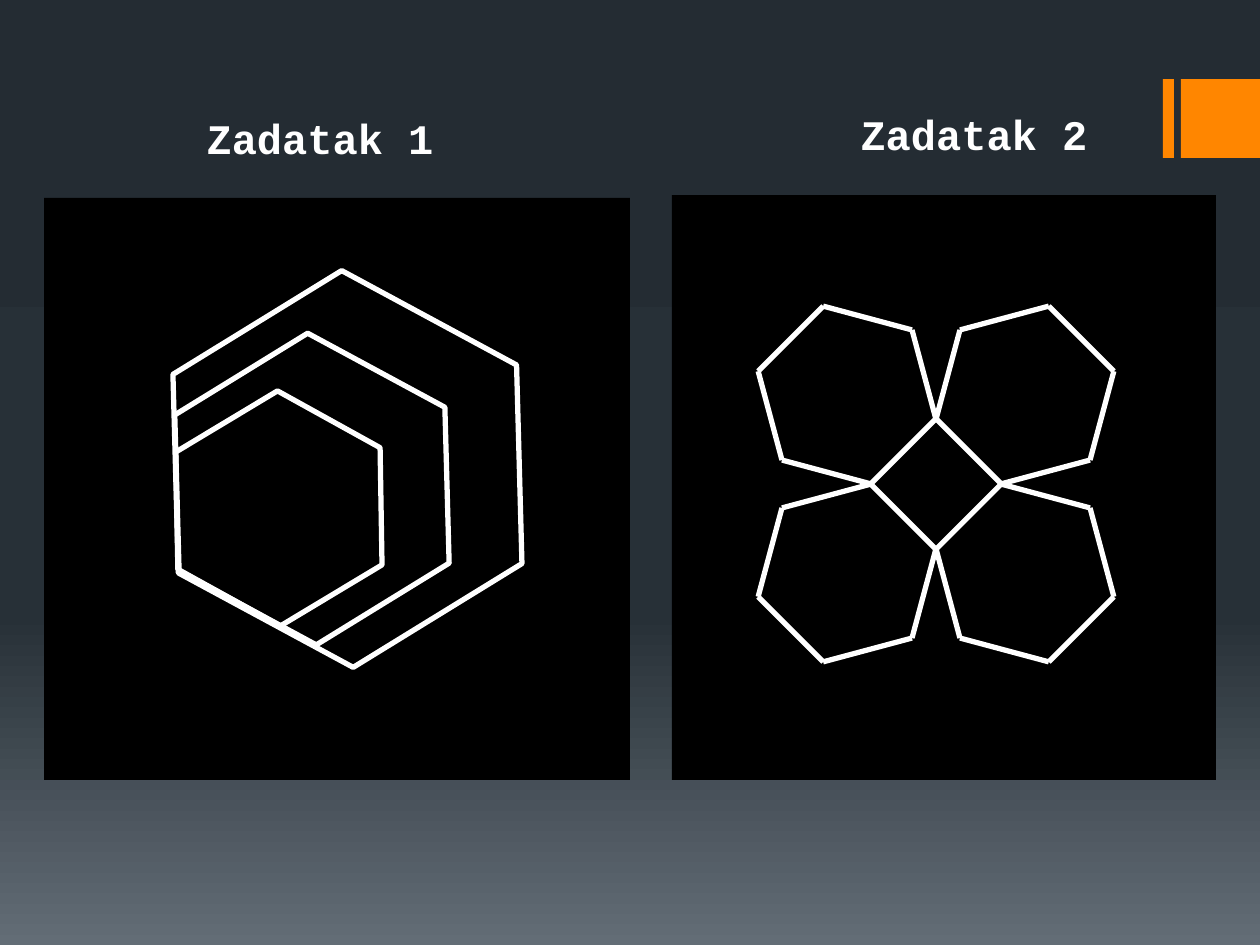
from copy import deepcopy
from math import cos, radians, sin

from lxml.etree import SubElement
from pptx import Presentation
from pptx.dml.color import RGBColor
from pptx.enum.shapes import MSO_CONNECTOR, MSO_SHAPE
from pptx.enum.text import MSO_AUTO_SIZE, PP_ALIGN
from pptx.oxml.ns import qn
from pptx.util import Emu, Pt

PX_PER_INCH = 126
COLORS = {
    "top": "242C33",
    "middle": "273037",
    "bottom": "636D76",
    "accent": "FF8600",
    "panel": "000000",
    "white": "FFFFFF",
}
FONT = "Courier New"
OUTLINE = Pt(3)

ACCENT_BARS = [(1163, 79, 11, 79), (1181, 79, 79, 79)]
PANELS = [(44, 198, 586, 582), (672, 195, 544, 585)]
TITLES = [("Zadatak 1", 174, 106), ("Zadatak 2", 828, 102)]
NESTED_HEXAGONS = [
    (156, 354, 312, 270, 328.4),
    (161, 407, 236, 203, 329),
    (149, 297, 397, 344, 328.4),
]
FLOWER_CENTER = (936, 484)
PETAL_OFFSET = 89
PETAL_RADIUS = 92


def px(length):
    return Emu(round(length * 914400 / PX_PER_INCH))


def rgb(name):
    return RGBColor.from_string(COLORS[name])


def paint_background(slide):
    fill = slide.background.fill
    fill.gradient()
    fill.gradient_angle = 270
    last_stop = list(slide.element.iter(qn("a:gs")))[-1]
    last_stop.addnext(deepcopy(last_stop))
    stops = [("top", 0), ("middle", 0.65), ("bottom", 1)]
    for stop, (color, position) in zip(fill.gradient_stops, stops):
        stop.color.rgb = rgb(color)
        stop.position = position


def add_block(slide, box, color):
    block = slide.shapes.add_shape(MSO_SHAPE.RECTANGLE, *map(px, box))
    block.shadow.inherit = False
    block.fill.solid()
    block.fill.fore_color.rgb = rgb(color)
    block.line.fill.background()


def add_title(slide, wording, left, top):
    title = slide.shapes.add_textbox(px(left), px(top), px(292), px(63))
    frame = title.text_frame
    frame.word_wrap = True
    frame.auto_size = MSO_AUTO_SIZE.SHAPE_TO_FIT_TEXT
    paragraph = frame.paragraphs[0]
    paragraph.alignment = PP_ALIGN.CENTER
    run = paragraph.add_run()
    run.text = wording
    run.font.name = FONT
    run.font.size = Pt(24)
    run.font.bold = True
    run.font.color.rgb = rgb("white")


def draw_outline(line):
    line.color.rgb = rgb("white")
    line.width = OUTLINE


def add_hexagon(slide, left, top, width, height, rotation):
    hexagon = slide.shapes.add_shape(
        MSO_SHAPE.HEXAGON, px(left), px(top), px(width), px(height))
    hexagon.shadow.inherit = False
    hexagon.adjustments[0] = 0.289
    hexagon.rotation = rotation
    hexagon.fill.background()
    draw_outline(hexagon.line)


def add_edge(group, start, end):
    edge = group.shapes.add_connector(
        MSO_CONNECTOR.STRAIGHT, *map(px, (*start, *end)))
    draw_outline(edge.line)
    SubElement(edge._element.spPr, qn("a:effectLst"))


def petal_corners(side_x, side_y):
    """Corners of a regular hexagon, mirrored into one quadrant of the flower."""
    center_x, center_y = FLOWER_CENTER
    corners = []
    for step in range(6):
        angle = radians(15 + 60 * step)
        corners.append((
            center_x + side_x * (PETAL_OFFSET + PETAL_RADIUS * cos(angle)),
            center_y + side_y * (PETAL_OFFSET + PETAL_RADIUS * sin(angle)),
        ))
    return corners


def add_flower(slide):
    flower = slide.shapes.add_group_shape()
    for side_x in (-1, 1):
        for side_y in (-1, 1):
            corners = petal_corners(side_x, side_y)
            for start, end in zip(corners, corners[1:] + corners[:1]):
                add_edge(flower, start, end)


def main():
    prs = Presentation()
    prs.slide_width, prs.slide_height = px(1260), px(945)
    slide = prs.slides.add_slide(prs.slide_layouts[6])
    paint_background(slide)
    for box in ACCENT_BARS:
        add_block(slide, box, "accent")
    for box in PANELS:
        add_block(slide, box, "panel")
    for title in TITLES:
        add_title(slide, *title)
    add_flower(slide)
    for hexagon in NESTED_HEXAGONS:
        add_hexagon(slide, *hexagon)
    prs.save("out.pptx")


if __name__ == "__main__":
    main()
